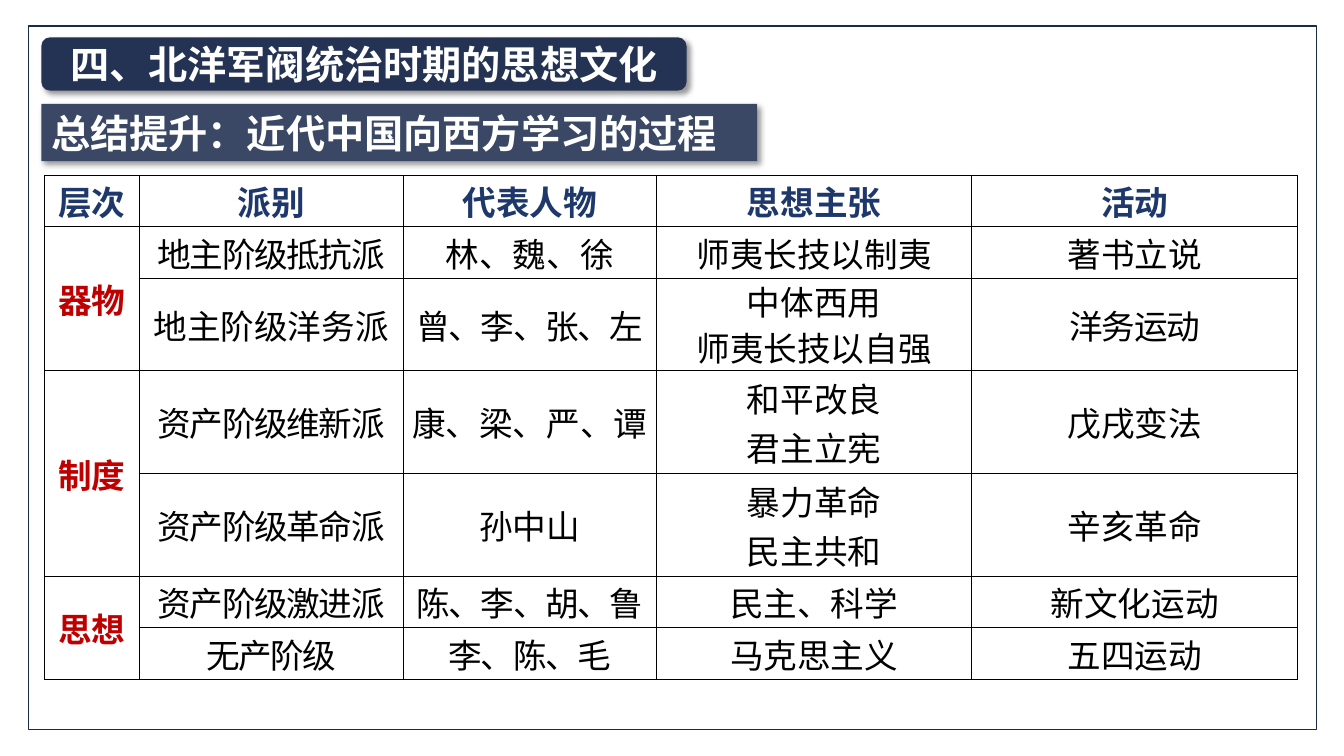
from lxml import etree
from pptx import Presentation
from pptx.dml.color import RGBColor
from pptx.enum import shapes, text
from pptx.oxml import ns
from pptx.util import Inches, Pt

FONT = "Noto Sans CJK SC"
NAVY = RGBColor(0x24, 0x33, 0x54)
SLATE = RGBColor(0x3A, 0x48, 0x65)
FRAME_LINE = RGBColor(0x1B, 0x2A, 0x47)
HEADER_BLUE = RGBColor(0x1E, 0x38, 0x6B)
LEVEL_RED = RGBColor(0xC0, 0x00, 0x00)
WHITE = RGBColor(0xFF, 0xFF, 0xFF)
BLACK = RGBColor(0x00, 0x00, 0x00)

FRAME_BOX = (0.28, 0.26, 12.78, 6.98)
BANNERS = [
    ("四、北洋军阀统治时期的思想文化", shapes.MSO_SHAPE.ROUNDED_RECTANGLE,
     (0.41, 0.37, 6.4, 0.53), NAVY, text.PP_ALIGN.CENTER),
    ("总结提升：近代中国向西方学习的过程", shapes.MSO_SHAPE.RECTANGLE,
     (0.41, 1.03, 7.1, 0.57), SLATE, text.PP_ALIGN.LEFT),
]
HEADERS = ["层次", "派别", "代表人物", "思想主张", "活动"]
LEVELS = [
    ("器物", [
        ("地主阶级抵抗派", "林、魏、徐", "师夷长技以制夷", "著书立说"),
        ("地主阶级洋务派", "曾、李、张、左", "中体西用\n师夷长技以自强", "洋务运动"),
    ]),
    ("制度", [
        ("资产阶级维新派", "康、梁、严、谭", "和平改良\n君主立宪", "戊戌变法"),
        ("资产阶级革命派", "孙中山", "暴力革命\n民主共和", "辛亥革命"),
    ]),
    ("思想", [
        ("资产阶级激进派", "陈、李、胡、鲁", "民主、科学", "新文化运动"),
        ("无产阶级", "李、陈、毛", "马克思主义", "五四运动"),
    ]),
]
# Entries set one point tighter between characters
CONDENSED = {"地主阶级抵抗派", "曾、李、张、左", "洋务运动", "资产阶级维新派",
             "资产阶级革命派", "资产阶级激进派", "陈、李、胡、鲁", "无产阶级", "李、陈、毛"}
TABLE_ORIGIN = (0.44, 1.74)
COLUMN_WIDTHS = [0.94, 2.62, 2.51, 3.13, 3.23]
ROW_HEIGHTS = [0.51, 0.51, 0.92, 1.02, 1.02, 0.51, 0.51]
TWO_LINE_HEIGHT = 0.97
CELL_FORMAT = {
    "vertical_anchor": text.MSO_ANCHOR.MIDDLE,
    "margin_left": Inches(0.06), "margin_right": Inches(0.06),
    "margin_top": 0, "margin_bottom": 0,
}


def inches(values):
    return [Inches(value) for value in values]


def write(paragraph, words, size, color, bold, align):
    paragraph.alignment = align
    run = paragraph.add_run()
    run.text = words
    font_format = {"name": FONT, "size": Pt(size), "bold": bold}
    for key, value in font_format.items():
        setattr(run.font, key, value)
    run.font.color.rgb = color
    properties = run.font._element
    east_asian = etree.SubElement(properties, ns.qn("a:ea"))
    east_asian.set("typeface", FONT)
    if words in CONDENSED:
        properties.set("spc", "-100")


def add_shadow(shape):
    """Soft black shadow cast to the lower right."""
    shape.shadow.inherit = False
    effects = shape._element.spPr.find(ns.qn("a:effectLst"))
    shadow = etree.SubElement(effects, ns.qn("a:outerShdw"), blurRad=str(Pt(4)),
                              dist=str(Pt(3)), dir="2700000", algn="tl", rotWithShape="0")
    color = etree.SubElement(shadow, ns.qn("a:srgbClr"), val=str(BLACK))
    etree.SubElement(color, ns.qn("a:alpha"), val="40000")


def add_borders(cell):
    properties = cell._tc.get_or_add_tcPr()
    for index, side in enumerate(("lnL", "lnR", "lnT", "lnB")):
        line = etree.Element(ns.qn("a:" + side), w=str(Pt(1)))
        fill = etree.SubElement(line, ns.qn("a:solidFill"))
        etree.SubElement(fill, ns.qn("a:srgbClr"), val=str(BLACK))
        properties.insert(index, line)


def fill_cell(cell, words, color, bold, row_height):
    lines = words.split("\n")
    frame = cell.text_frame
    for index, line in enumerate(lines):
        paragraph = frame.add_paragraph() if index else frame.paragraphs[0]
        write(paragraph, line, 24, color, bold, text.PP_ALIGN.CENTER)
        if len(lines) > 1 and row_height < TWO_LINE_HEIGHT:
            paragraph.line_spacing = 0.95


def add_banner(slide, words, outline, box, color, align):
    banner = slide.shapes.add_shape(outline, *inches(box))
    banner.fill.solid()
    banner.fill.fore_color.rgb = color
    banner.line.fill.background()
    add_shadow(banner)
    frame = banner.text_frame
    frame.word_wrap = True
    frame.vertical_anchor = text.MSO_ANCHOR.MIDDLE
    write(frame.paragraphs[0], words, 28, WHITE, True, align)


def add_schools_table(slide):
    size = (sum(COLUMN_WIDTHS), sum(ROW_HEIGHTS))
    table = slide.shapes.add_table(len(ROW_HEIGHTS), len(COLUMN_WIDTHS),
                                   *inches(TABLE_ORIGIN + size)).table
    table.first_row = table.horz_banding = False
    for column, width in zip(table.columns, COLUMN_WIDTHS):
        column.width = Inches(width)
    for row, height in zip(table.rows, ROW_HEIGHTS):
        row.height = Inches(height)
    for cell in table.iter_cells():
        for key, value in CELL_FORMAT.items():
            setattr(cell, key, value)
        cell.fill.background()
        add_borders(cell)

    for column, header in enumerate(HEADERS):
        fill_cell(table.cell(0, column), header, HEADER_BLUE, True, ROW_HEIGHTS[0])
    row = 1
    for level, schools in LEVELS:
        level_cell = table.cell(row, 0)
        level_cell.merge(table.cell(row + len(schools) - 1, 0))
        fill_cell(level_cell, level, LEVEL_RED, True, ROW_HEIGHTS[row])
        for school in schools:
            for column, words in enumerate(school, start=1):
                fill_cell(table.cell(row, column), words, BLACK, False, ROW_HEIGHTS[row])
            row += 1


def main():
    deck = Presentation()
    deck.slide_width, deck.slide_height = Inches(13.33), Inches(7.5)
    slide = deck.slides.add_slide(deck.slide_layouts[6])
    frame = slide.shapes.add_shape(shapes.MSO_SHAPE.RECTANGLE, *inches(FRAME_BOX))
    frame.shadow.inherit = False
    frame.fill.background()
    frame.line.color.rgb = FRAME_LINE
    frame.line.width = Pt(1)
    for banner in BANNERS:
        add_banner(slide, *banner)
    add_schools_table(slide)
    deck.save("out.pptx")


if __name__ == "__main__":
    main()
